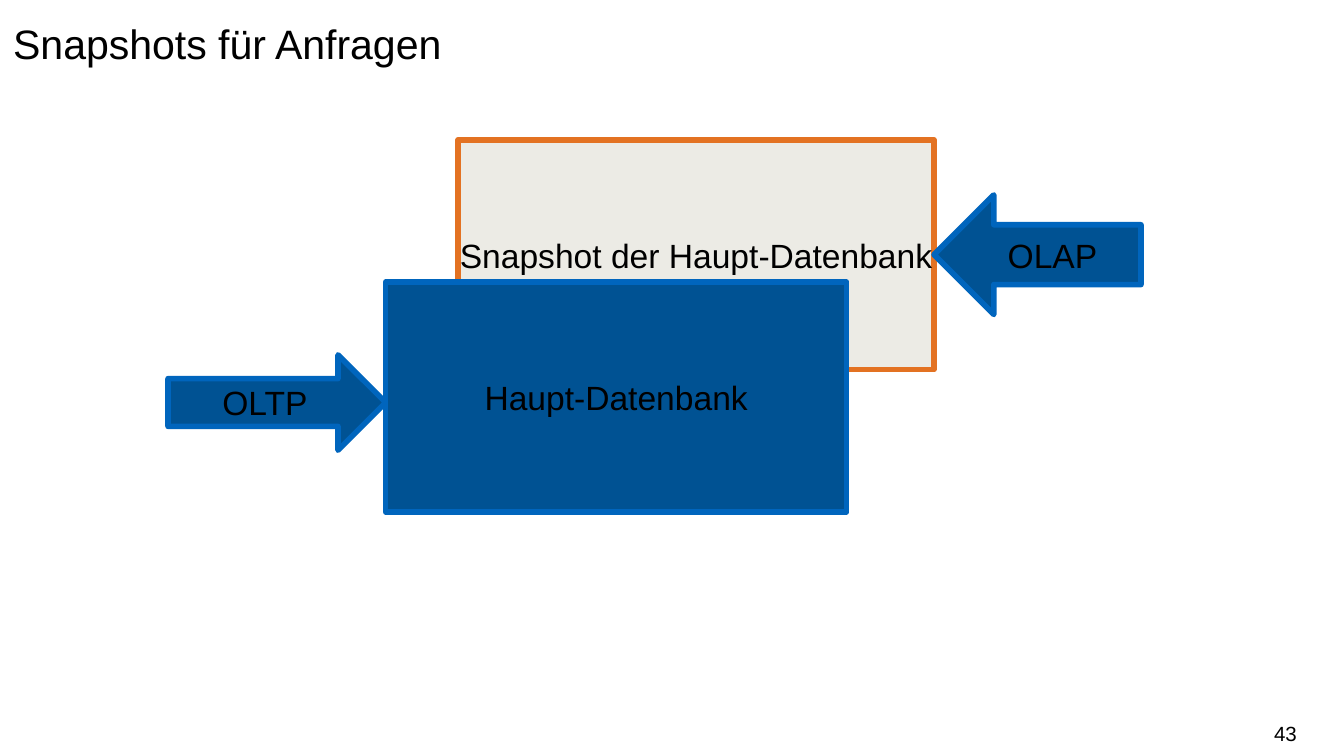
from pptx import Presentation
from pptx.dml.color import RGBColor
from pptx.enum.shapes import MSO_SHAPE
from pptx.enum.text import MSO_ANCHOR, PP_ALIGN
from pptx.util import Inches, Pt

RECTANGLE = MSO_SHAPE.RECTANGLE
RIGHT_ARROW, LEFT_ARROW = MSO_SHAPE.RIGHT_ARROW, MSO_SHAPE.LEFT_ARROW
TOP, MIDDLE = MSO_ANCHOR.TOP, MSO_ANCHOR.MIDDLE
LEFT, CENTER, RIGHT = PP_ALIGN.LEFT, PP_ALIGN.CENTER, PP_ALIGN.RIGHT

BLACK = RGBColor(0x00, 0x00, 0x00)
DARK_BLUE = RGBColor(0x00, 0x52, 0x93)
BLUE = RGBColor(0x00, 0x65, 0xBD)
IVORY = RGBColor(0xEC, 0xEB, 0xE5)
ORANGE = RGBColor(0xE3, 0x72, 0x22)

# Content
TITLE = "Snapshots für Anfragen"
PAGE_NUMBER = "43"

# Layout in inches: each arrow touches the side of its database
SLIDE_W = 10
SLIDE_H = SLIDE_W * 9 / 16
DATABASE_H = 1.71
SNAPSHOT_X, SNAPSHOT_Y, SNAPSHOT_W = 3.41, 1.04, 3.54
MAIN_X, MAIN_Y, MAIN_W = 2.87, 2.1, 3.43
OLTP_W, OLTP_H, OLTP_DROP = 1.62, 0.71, 0.04
OLAP_W, OLAP_H = 1.54, 0.89


def beside(database_y, arrow_h):
    """Top of an arrow centred on a database's height."""
    return database_y + (DATABASE_H - arrow_h) / 2


# Text, preset, left, top, width, height, fill, outline; back to front
PARTS = [
    ("OLTP", RIGHT_ARROW, MAIN_X - OLTP_W, beside(MAIN_Y, OLTP_H) + OLTP_DROP,
     OLTP_W, OLTP_H, DARK_BLUE, BLUE),
    ("Snapshot der Haupt-Datenbank", RECTANGLE, SNAPSHOT_X, SNAPSHOT_Y,
     SNAPSHOT_W, DATABASE_H, IVORY, ORANGE),
    ("Haupt-Datenbank", RECTANGLE, MAIN_X, MAIN_Y,
     MAIN_W, DATABASE_H, DARK_BLUE, BLUE),
    ("OLAP", LEFT_ARROW, SNAPSHOT_X + SNAPSHOT_W, beside(SNAPSHOT_Y, OLAP_H),
     OLAP_W, OLAP_H, DARK_BLUE, BLUE),
]


def write(shape, text, size, align, anchor, inset_x, inset_y, wrap=True):
    frame = shape.text_frame
    frame.word_wrap = wrap
    frame.vertical_anchor = anchor
    frame.margin_left = frame.margin_right = Inches(inset_x)
    frame.margin_top = frame.margin_bottom = Inches(inset_y)
    paragraph = frame.paragraphs[0]
    paragraph.alignment = align
    run = paragraph.add_run()
    run.text = text
    run.font.name = "Arial"
    run.font.size = Pt(size)
    run.font.color.rgb = BLACK
    return paragraph


def add_part(slide, text, preset, x, y, w, h, fill, outline):
    part = slide.shapes.add_shape(preset, Inches(x), Inches(y), Inches(w), Inches(h))
    part.shadow.inherit = False
    part.fill.solid()
    part.fill.fore_color.rgb = fill
    part.line.color.rgb = outline
    part.line.width = Pt(3)
    write(part, text, 18, CENTER, MIDDLE, 0.07, 0.04, wrap=False)


def main():
    prs = Presentation()
    prs.slide_width, prs.slide_height = Inches(SLIDE_W), Inches(SLIDE_H)
    slide = prs.slides.add_slide(prs.slide_layouts[6])

    # Title
    title = slide.shapes.add_textbox(0, 0, Inches(SLIDE_W), Inches(0.94))
    write(title, TITLE, 22, LEFT, TOP, 0.1, 0.05).line_spacing = 1.25

    # Databases and their workloads
    for part in PARTS:
        add_part(slide, *part)

    # Page number
    number = slide.shapes.add_textbox(Inches(7.41), Inches(5.31), Inches(2.24), Inches(0.3))
    write(number, PAGE_NUMBER, 11, RIGHT, MIDDLE, 0, 0.05)

    prs.save("out.pptx")


if __name__ == "__main__":
    main()
